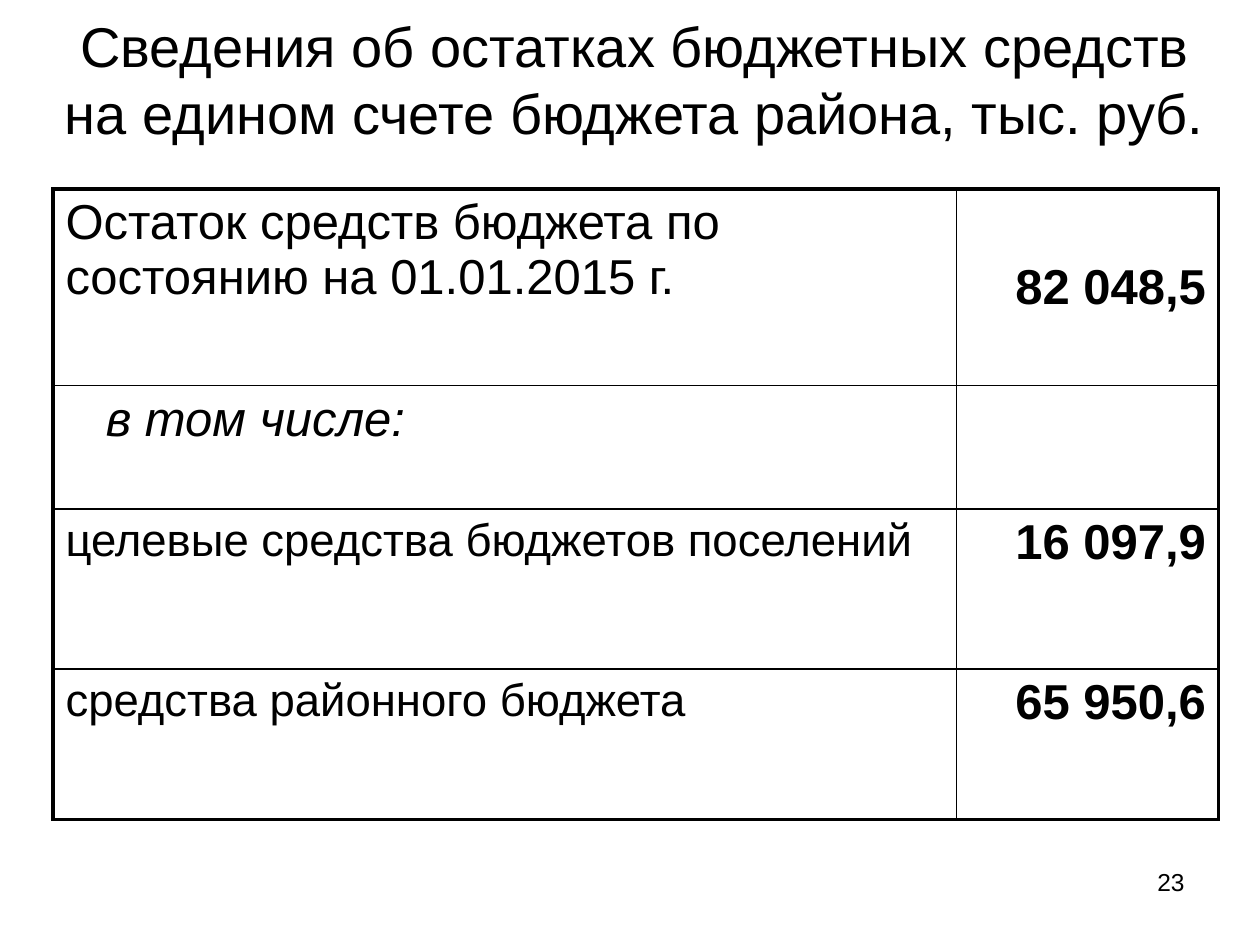
from lxml import etree
from pptx import Presentation
from pptx import util as u
from pptx.dml.color import RGBColor
from pptx.enum import text
from pptx.oxml import ns

COLORS = {"ink": "000000", "paper": "FFFFFF"}
FONT = "Arial"
WIDTH, HEIGHT = u.Inches(10), u.Inches(7.5)
COLUMNS = [7.17, 2.08]
ROWS = [1.56, 0.98, 1.27, 1.19]
OUTER, INNER = 2.25, 1
BALANCES = [
    ("Остаток средств бюджета по состоянию на 01.01.2015 г.", 28, "82 048,5"),
    ("в том числе:", 28, ""),
    ("целевые средства бюджетов поселений", 26, "16 097,9"),
    ("средства районного бюджета", 26, "65 950,6"),
]


def share(left, top, width, height):
    return (int(WIDTH * left), int(HEIGHT * top),
            int(WIDTH * width), int(HEIGHT * height))


def write(frame, words, size, align, bold=False, italic=False):
    frame.text = words
    line = frame.paragraphs[0]
    line.alignment = align
    font = line.runs[0].font if line.runs else line.font
    font.name, font.size = FONT, u.Pt(size)
    font.bold, font.italic = bold, italic
    font.color.rgb = RGBColor.from_string(COLORS["ink"])
    return line


def add_caption(slide, box, words, size, align, anchor):
    frame = slide.shapes.add_textbox(*box).text_frame
    frame.word_wrap = True
    frame.vertical_anchor = anchor
    write(frame, words, size, align)


def rule_cell(cell, row, column):
    edges = {
        "lnL": column == 0,
        "lnR": column == len(COLUMNS) - 1,
        "lnT": row == 0,
        "lnB": row == len(ROWS) - 1,
    }
    properties = cell._tc.get_or_add_tcPr()
    for tag, outside in edges.items():
        weight = u.Pt(OUTER if outside else INNER)
        edge = etree.SubElement(properties, ns.qn(f"a:{tag}"), w=str(int(weight)))
        fill = etree.SubElement(edge, ns.qn("a:solidFill"))
        etree.SubElement(fill, ns.qn("a:srgbClr"), val=COLORS["ink"])
    cell.fill.background()


def add_balances(slide, box):
    left, top, width, height = box
    table = slide.shapes.add_table(len(ROWS), len(COLUMNS), *box).table
    table.first_row = table.horz_banding = False
    for column, part in zip(table.columns, COLUMNS):
        column.width = int(width * part / sum(COLUMNS))
    for row, part in zip(table.rows, ROWS):
        row.height = int(height * part / sum(ROWS))

    for row, (source, size, amount) in enumerate(BALANCES):
        source_cell, amount_cell = table.cell(row, 0), table.cell(row, 1)
        subheading = not amount
        line = write(source_cell.text_frame, source, size,
                     text.PP_ALIGN.LEFT, italic=subheading)
        if subheading:
            line._p.get_or_add_pPr().set("marL", str(int(u.Inches(0.32))))
        write(amount_cell.text_frame, amount, 28, text.PP_ALIGN.RIGHT, bold=True)
        for column, cell in enumerate((source_cell, amount_cell)):
            rule_cell(cell, row, column)
    table.cell(0, 1).vertical_anchor = text.MSO_ANCHOR.MIDDLE


def main():
    deck = Presentation()
    deck.slide_width, deck.slide_height = WIDTH, HEIGHT
    slide = deck.slides.add_slide(deck.slide_layouts[6])
    slide.background.fill.solid()
    slide.background.fill.fore_color.rgb = RGBColor.from_string(COLORS["paper"])
    add_caption(slide, share(0.717, 0.911, 0.233, 0.069), "23", 14,
                text.PP_ALIGN.RIGHT, text.MSO_ANCHOR.TOP)
    add_caption(slide, share(0.025, 0.033, 0.958, 0.1),
                "Сведения об остатках бюджетных средств "
                "на едином счете бюджета района, тыс. руб.",
                32, text.PP_ALIGN.CENTER, text.MSO_ANCHOR.MIDDLE)
    add_balances(slide, share(0.042, 0.2, 0.925, 0.667))
    deck.save("out.pptx")


if __name__ == "__main__":
    main()
